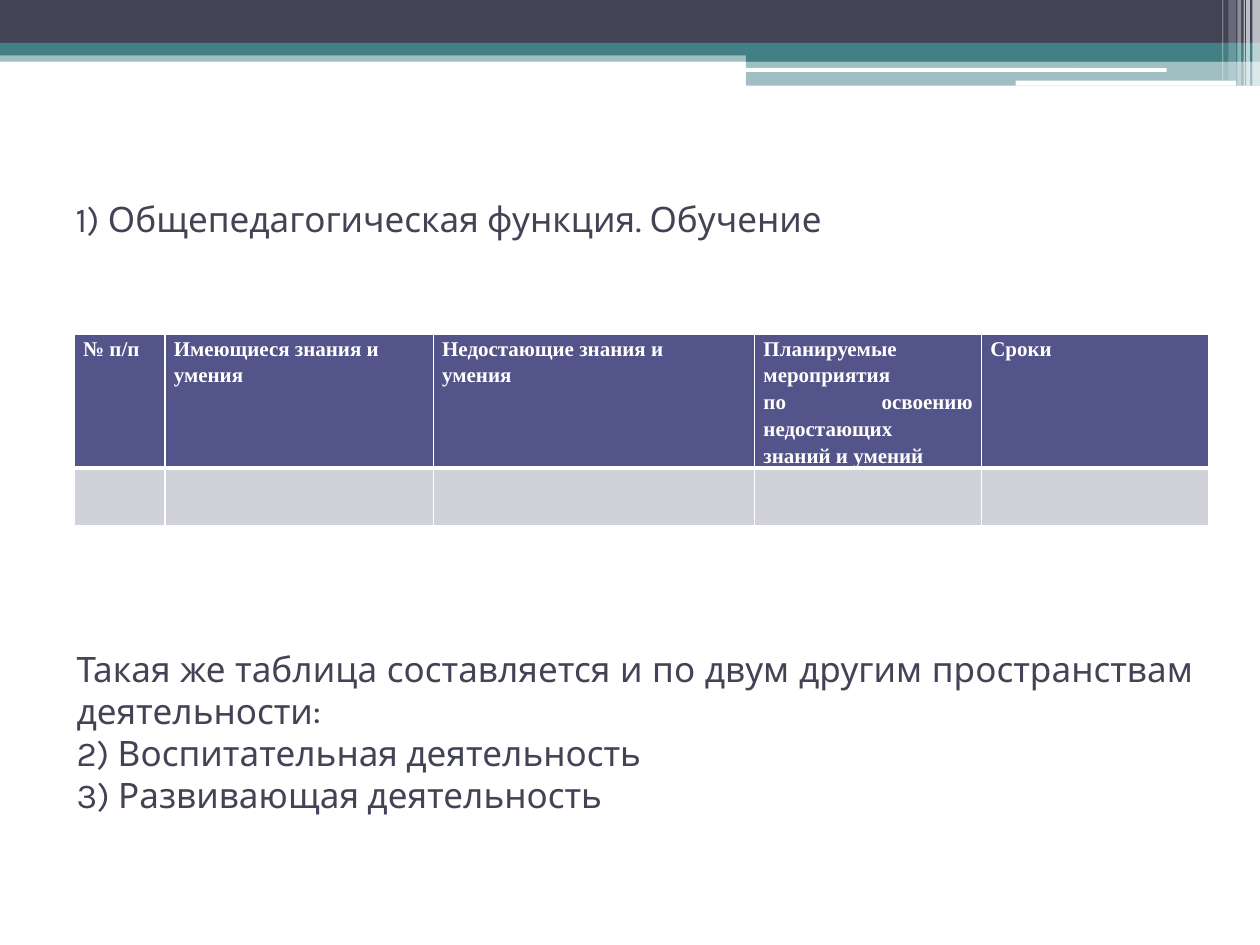
"""Build a slide with a table of pedagogical knowledge and skills."""
from pptx import Presentation
from pptx.dml.color import RGBColor as RGB
from pptx.enum.shapes import MSO_SHAPE as SHAPE
from pptx.enum.text import MSO_ANCHOR as ANCHOR, MSO_AUTO_SIZE as FIT, PP_ALIGN as ALIGN
from pptx.oxml import parse_xml
from pptx.oxml.ns import nsdecls, qn
from pptx.util import Inches, Pt

THEME = {
    "dark": "424456", "teal": "438086", "white": "FFFFFF",
    "header": "53548A", "cell": "D1D1DA",
    "font": "Karla", "table_font": "Times New Roman",
    "text_size": 20, "table_size": 12, "thin": 1, "thick": 3,
}
TITLE = "1) Общепедагогическая функция. Обучение"
COLUMNS = [
    (0.72, ["№ п/п"]),
    (2.13, ["Имеющиеся знания и", "умения"]),
    (2.55, ["Недостающие знания и", "умения"]),
    (1.8, ["Планируемые мероприятия", "по освоению недостающих", "знаний и умений"]),
    (1.8, ["Сроки"]),
]
ROW_HEIGHTS = [1.05, 0.46]
NOTES = [
    "Такая же таблица составляется и по двум другим пространствам деятельности:",
    "2) Воспитательная деятельность",
    "3) Развивающая деятельность",
]
BANDS = [
    (0, 0.4, 10, 0.09, "teal", 50),
    (0, 0, 10, 0.34, "dark", 100),
    (0, 0.34, 10, 0.1, "teal", 100),
    (5.92, 0.39, 4.08, 0.1, "teal", 100),
    (5.92, 0.48, 4.08, 0.2, "teal", 50),
]
PILLS = [(5.91, 0.54, 3.35, 0.03), (8.06, 0.64, 1.75, 0.04)]
STRIPES = [
    (9.94, 0.06, 0.68, 65), (9.89, 0.03, 0.68, 65), (9.87, 0.01, 0.68, 60),
    (9.82, 0.03, 0.68, 40), (9.75, 0.06, 0.64, 20), (9.7, 0.01, 0.64, 30),
]


def color(name):
    return RGB.from_string(THEME[name])


def add_block(s, kind, box, fill, opacity=100):
    sp = s.shapes.add_shape(kind, *map(Inches, box))
    sp.shadow.inherit = False
    sp.line.fill.background()
    sp.fill.solid()
    sp.fill.fore_color.rgb = color(fill)
    if opacity < 100:
        clr = sp._element.spPr.find(".//" + qn("a:srgbClr"))
        clr.append(parse_xml(f'<a:alpha {nsdecls("a")} val="{opacity * 1000}"/>'))


def write(tf, lines, align, font, size, fill, bold=False, spacing=None):
    for i, line in enumerate(lines):
        p = tf.add_paragraph() if i else tf.paragraphs[0]
        p.text = line
        p.alignment = align
        p.line_spacing = spacing
        p.font.name, p.font.size, p.font.bold = font, Pt(size), bold
        p.font.color.rgb = color(fill)


def set_borders(cell, widths):
    tcPr = cell._tc.get_or_add_tcPr()
    for i, (side, width) in enumerate(zip("LRTB", widths)):
        tcPr.insert(i, parse_xml(
            f'<a:ln{side} {nsdecls("a")} w="{Pt(width)}"><a:solidFill>'
            f'<a:srgbClr val="{THEME["white"]}"/></a:solidFill></a:ln{side}>'))


def add_table(s):
    width = sum(w for w, _ in COLUMNS)
    table = s.shapes.add_table(
        len(ROW_HEIGHTS), len(COLUMNS), Inches(0.59), Inches(2.65),
        Inches(width), Inches(sum(ROW_HEIGHTS))).table
    table.first_row = table.horz_banding = False
    for row, height in zip(table.rows, ROW_HEIGHTS):
        row.height = Inches(height)
    thin, thick = THEME["thin"], THEME["thick"]
    for i, (width, lines) in enumerate(COLUMNS):
        table.columns[i].width = Inches(width)
        head, body = table.cell(0, i), table.cell(1, i)
        for cell, fill in ((head, "header"), (body, "cell")):
            cell.fill.solid()
            cell.fill.fore_color.rgb = color(fill)
        head.margin_left = head.margin_right = Inches(0.07)
        head.margin_top = head.margin_bottom = 0
        write(head.text_frame, lines, ALIGN.JUSTIFY, THEME["table_font"],
              THEME["table_size"], "white", True, 1.15)
        set_borders(head, (thin, thin, thin, thick))
        set_borders(body, (thin, thin, thick, thin))


def main():
    prs = Presentation()
    prs.slide_width, prs.slide_height = Inches(10), Inches(7.5)
    s = prs.slides.add_slide(prs.slide_layouts[5])
    for *box, fill, opacity in BANDS:
        add_block(s, SHAPE.RECTANGLE, box, fill, opacity)
    for box in PILLS:
        add_block(s, SHAPE.ROUNDED_RECTANGLE, box, "white")
    for left, width, height, opacity in STRIPES:
        add_block(s, SHAPE.RECTANGLE, (left, 0, width, height), "white", opacity)

    title = s.shapes.title
    title.left, title.top, title.width, title.height = map(Inches, (0.5, 1.15, 9, 1.17))
    tf = title.text_frame
    tf.auto_size, tf.vertical_anchor = FIT.NONE, ANCHOR.MIDDLE
    write(tf, [TITLE], ALIGN.LEFT, THEME["font"], THEME["text_size"], "dark")

    add_table(s)

    tf = s.shapes.add_textbox(*map(Inches, (0.51, 5.09, 9.06, 1.45))).text_frame
    tf.word_wrap, tf.auto_size = True, FIT.SHAPE_TO_FIT_TEXT
    write(tf, NOTES, ALIGN.JUSTIFY, THEME["font"], THEME["text_size"], "dark")
    prs.save("out.pptx")


if __name__ == "__main__":
    main()
